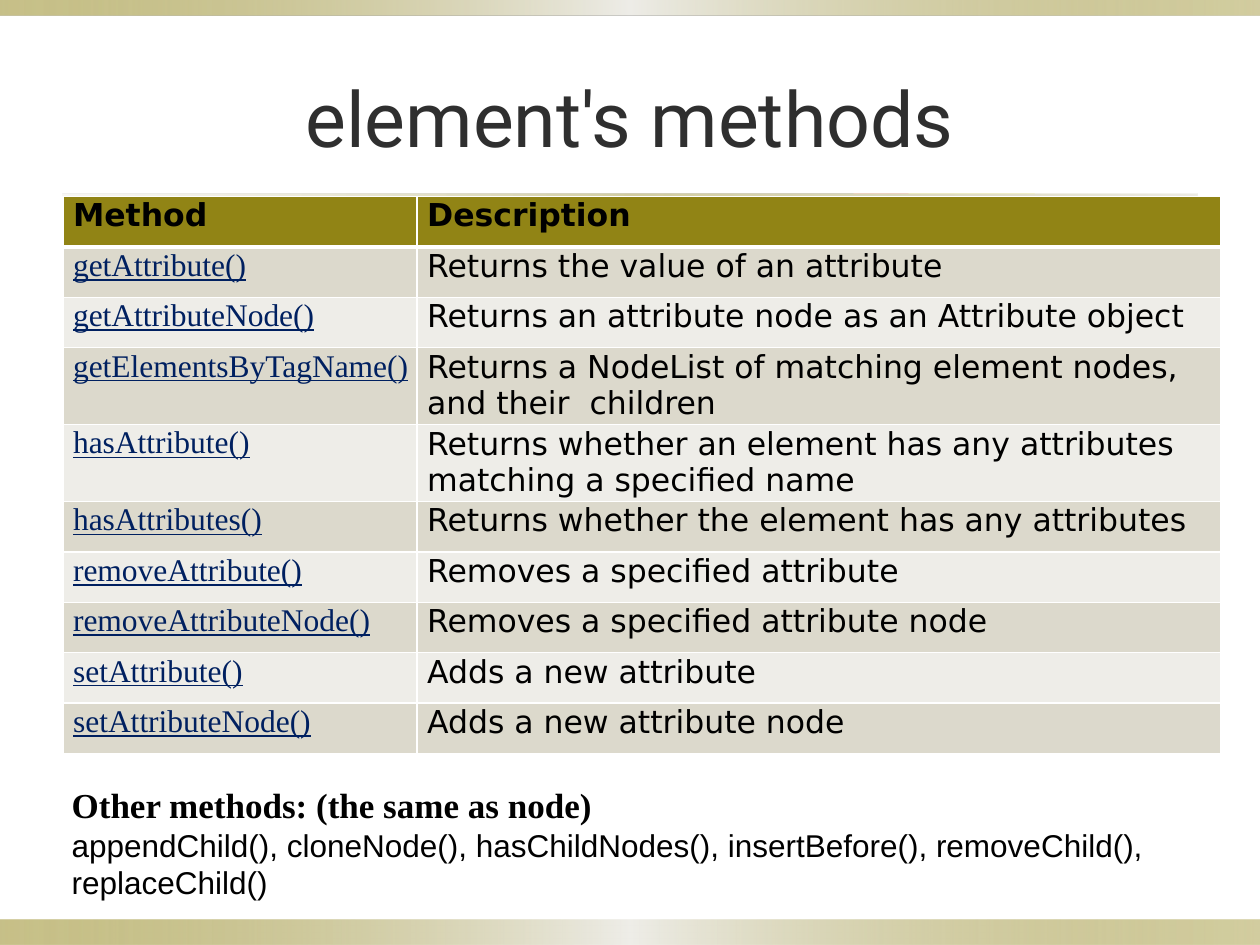
from lxml.etree import SubElement
from pptx import Presentation
from pptx.dml.color import RGBColor
from pptx.enum.shapes import MSO_SHAPE
from pptx.enum.text import MSO_ANCHOR, PP_ALIGN
from pptx.oxml.ns import qn
from pptx.util import Inches, Pt

OLIVE = RGBColor(0x91, 0x84, 0x15)
SAND = RGBColor(0xDC, 0xD9, 0xCC)
PALE = RGBColor(0xEE, 0xED, 0xE8)
WHITE = RGBColor(0xFF, 0xFF, 0xFF)
BLACK = RGBColor(0, 0, 0)
NAVY = RGBColor(0x00, 0x20, 0x60)
CHARCOAL = RGBColor(0x2F, 0x2F, 0x2F)


def add_run(paragraph, text, font_name, size, color, bold=False, underline=False):
    run = paragraph.add_run()
    run.text = text
    run.font.name = font_name
    run.font.size = Pt(size)
    run.font.color.rgb = color
    run.font.bold = bold
    run.font.underline = underline


def add_color(parent, color, opacity=100):
    srgb = SubElement(parent, qn("a:srgbClr"), val=str(color))
    if opacity < 100:
        SubElement(srgb, qn("a:alpha"), val=str(opacity * 1000))


prs = Presentation()
prs.slide_width = Inches(10)
prs.slide_height = Inches(7.5)
slide = prs.slides.add_slide(prs.slide_layouts[6])

band_stops = [(OLIVE, 50), (PALE, 100), (OLIVE, 40)]
rule_stops = [(SAND, 20), (OLIVE, 40), (SAND, 50)]
bars = [
    (0, 7.3, 10, 0.2, band_stops),
    (0, 0, 10, 0.12, band_stops),
    (0.5, 1.54, 9, 0.02, rule_stops),
]
for left, top, width, height, stops in bars:
    bar = slide.shapes.add_shape(
        MSO_SHAPE.RECTANGLE, Inches(left), Inches(top), Inches(width), Inches(height)
    )
    bar.shadow.inherit = False
    bar.line.fill.background()
    bar.fill.gradient()
    bar.fill.gradient_angle = 0
    stop_list = next(bar.element.iter(qn("a:gsLst")))
    for old_stop in list(stop_list):
        stop_list.remove(old_stop)
    for index, (color, opacity) in enumerate(stops):
        stop = SubElement(stop_list, qn("a:gs"), pos=str(index * 50000))
        add_color(stop, color, opacity)

title = slide.shapes.add_textbox(Inches(0.5), Inches(0.3), Inches(9), Inches(1.25)).text_frame
title.word_wrap = True
title.vertical_anchor = MSO_ANCHOR.MIDDLE
title.paragraphs[0].alignment = PP_ALIGN.CENTER
add_run(title.paragraphs[0], "element's methods", "Roboto", 44, CHARCOAL)

methods = [
    ("Method", "Description"),
    ("getAttribute()", "Returns the value of an attribute"),
    ("getAttributeNode()", "Returns an attribute node as an Attribute object"),
    ("getElementsByTagName()", "Returns a NodeList of matching element nodes, and their  children"),
    ("hasAttribute()", "Returns whether an element has any attributes matching a specified name"),
    ("hasAttributes()", "Returns whether the element has any attributes"),
    ("removeAttribute()", "Removes a specified attribute"),
    ("removeAttributeNode()", "Removes a specified attribute node"),
    ("setAttribute()", "Adds a new attribute"),
    ("setAttributeNode()", "Adds a new attribute node"),
]
two_line_rows = (3, 4)

table = slide.shapes.add_table(
    len(methods), 2, Inches(0.5), Inches(1.56), Inches(9.19), Inches(4.4)
).table
table.columns[0].width = Inches(2.81)
table.columns[1].width = Inches(6.38)

for row, entry in enumerate(methods):
    table.rows[row].height = Inches(0.61 if row in two_line_rows else 0.4)
    for column, text in enumerate(entry):
        cell = table.cell(row, column)
        cell.margin_left = Inches(0.08)
        cell.margin_top = cell.margin_right = Inches(0.01)
        cell.margin_bottom = 0
        for side in ("L", "R", "T", "B"):
            under_header = (row, side) in ((0, "B"), (1, "T"))
            border = SubElement(
                cell._tc.get_or_add_tcPr(),
                qn(f"a:ln{side}"),
                w=str(Pt(3 if under_header else 1)),
            )
            add_color(SubElement(border, qn("a:solidFill")), WHITE)
        cell.fill.solid()
        cell.fill.fore_color.rgb = OLIVE if row == 0 else SAND if row % 2 else PALE
        paragraph = cell.text_frame.paragraphs[0]
        if row > 0 and column == 0:
            add_run(paragraph, text, "Times New Roman", 18, NAVY, underline=True)
        else:
            add_run(paragraph, text, "DejaVu Sans", 18, BLACK, bold=row == 0)

others = slide.shapes.add_textbox(Inches(0.47), Inches(6.17), Inches(8.98), Inches(1.04)).text_frame
others.word_wrap = True
add_run(
    others.paragraphs[0], "Other methods: (the same as node)", "Times New Roman", 20, BLACK, bold=True
)
add_run(
    others.add_paragraph(),
    "appendChild(), cloneNode(), hasChildNodes(), insertBefore(), removeChild(), replaceChild()",
    "Arial",
    18,
    BLACK,
)

prs.save("out.pptx")
